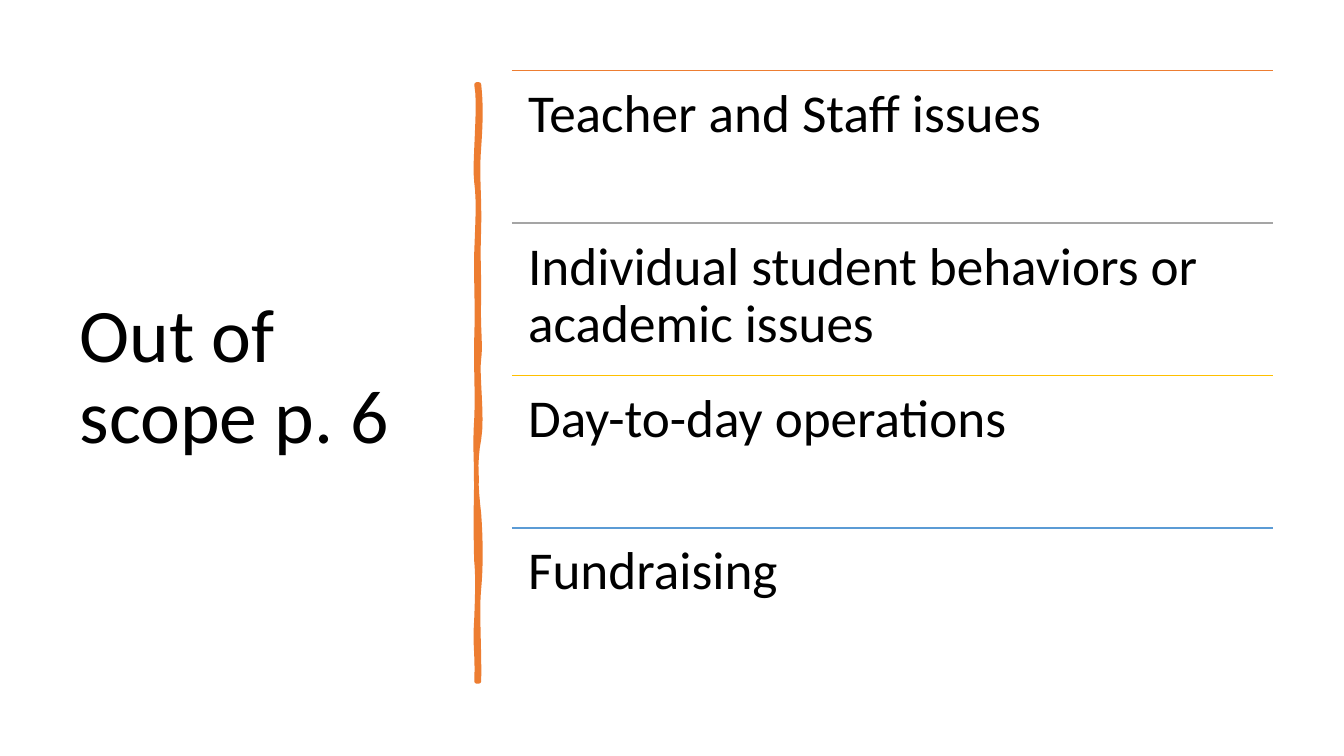
from dataclasses import dataclass

from pptx import Presentation
from pptx.dml.color import RGBColor
from pptx.enum.shapes import MSO_CONNECTOR
from pptx.enum.text import MSO_ANCHOR, MSO_AUTO_SIZE, PP_ALIGN
from pptx.oxml.ns import qn
from pptx.util import Cm, Pt
from lxml.etree import SubElement


@dataclass(frozen=True)
class Theme:
    font: str = "Calibri"
    ink: str = "000000"
    accent: str = "ED7D31"
    rules: tuple = ("ED7D31", "A5A5A5", "FFC000", "5B9BD5")
    title_size: int = 54
    topic_size: int = 38
    rule_width: float = 1
    stroke_width: float = 3.25


THEME = Theme()
TITLE = "Out of scope p. 6"
TOPICS = (
    "Teacher and Staff issues",
    "Individual student behaviors or academic issues",
    "Day-to-day operations",
    "Fundraising",
)

# Topic rows, in cm
ROW_LEFT, ROW_TOP, ROW_WIDTH, ROW_PITCH, ROW_INSET = 12.9, 1.78, 19.18, 3.84, 0.41

# Hand-drawn divider, in cm: each curve is (control x, y, control x, y, end y)
DIVIDER_TOP, RIGHT_X, LEFT_X = 2.13, 12.07, 12.01
RIGHT_EDGE = (
    (12.12, 2.59, 12.12, 3.02, 3.71),
    (12.01, 4.39, 12.09, 4.95, 5.74),
    (12.04, 6.53, 12.07, 6.65, 7.47),
    (12.04, 8.26, 12.12, 8.69, 9.04),
    (12.01, 9.40, 12.17, 10.52, 11.07),
    (11.96, 11.61, 11.99, 12.29, 12.95),
    (12.12, 13.61, 12.12, 14.33, 14.83),
    (12.01, 15.32, 12.09, 16.51, 17.17),
)
LEFT_EDGE = (
    (12.04, 16.41, 11.96, 16.36, 15.57),
    (12.04, 14.81, 12.04, 14.48, 14.15),
    (11.99, 13.82, 11.99, 12.57, 12.12),
    (12.01, 11.66, 11.96, 11.30, 10.54),
    (12.04, 9.80, 11.99, 9.47, 8.51),
    (12.04, 7.57, 11.99, 7.14, 6.35),
    (12.04, 5.54, 12.07, 5.08, 4.60),
    (11.94, 4.14, 12.12, 2.64, 2.13),
)


def apply(target, values):
    for attribute, value in values.items():
        setattr(target, attribute, value)


def write(frame, text, size, frame_format):
    apply(frame, {"word_wrap": True, "auto_size": MSO_AUTO_SIZE.NONE, **frame_format})
    paragraph = frame.paragraphs[0]
    apply(paragraph, {"alignment": PP_ALIGN.LEFT, "line_spacing": 0.9,
                      "space_before": Pt(0)})
    run = paragraph.add_run()
    run.text = text
    apply(run.font, {"name": THEME.font, "size": Pt(size)})
    run.font.color.rgb = RGBColor.from_string(THEME.ink)


def paint_line(line, colour, width):
    line.color.rgb = RGBColor.from_string(colour)
    line.width = Pt(width)


def add_title(slide):
    title = slide.shapes.title
    apply(title, {"left": Cm(1.75), "top": Cm(1.78),
                  "width": Cm(9.5), "height": Cm(15.52)})
    write(title.text_frame, TITLE, THEME.title_size,
          {"vertical_anchor": MSO_ANCHOR.MIDDLE})


def edge_points(edge, x, start_y, steps=8):
    """Sample the Bézier curves that run along one edge of the divider."""
    points = []
    for x1, y1, x2, y2, end_y in edge:
        for step in range(1, steps + 1):
            t = step / steps
            weights = ((1 - t) ** 3, 3 * t * (1 - t) ** 2, 3 * t * t * (1 - t), t ** 3)
            points.append(tuple(
                Cm(sum(w * v for w, v in zip(weights, values)))
                for values in ((x, x1, x2, x), (start_y, y1, y2, end_y))))
        start_y = end_y
    return points


def add_divider(slide):
    bottom = RIGHT_EDGE[-1][-1]
    outline = slide.shapes.build_freeform(Cm(RIGHT_X), Cm(DIVIDER_TOP))
    outline.add_line_segments(
        edge_points(RIGHT_EDGE, RIGHT_X, DIVIDER_TOP)
        + [(Cm(LEFT_X), Cm(bottom))]
        + edge_points(LEFT_EDGE, LEFT_X, bottom), close=True)
    divider = outline.convert_to_shape()
    divider.shadow.inherit = False
    divider.fill.solid()
    divider.fill.fore_color.rgb = RGBColor.from_string(THEME.accent)
    paint_line(divider.line, THEME.accent, THEME.stroke_width)


def add_rule(slide, top, colour):
    rule = slide.shapes.add_connector(
        MSO_CONNECTOR.STRAIGHT, Cm(ROW_LEFT), top, Cm(ROW_LEFT + ROW_WIDTH), top)
    paint_line(rule.line, colour, THEME.rule_width)
    SubElement(rule._element.spPr, qn("a:effectLst"))


def add_topic(slide, top, text):
    topic = slide.shapes.add_textbox(Cm(ROW_LEFT), top, Cm(ROW_WIDTH), Cm(ROW_PITCH))
    sides = ("left", "top", "right", "bottom")
    write(topic.text_frame, text, THEME.topic_size,
          {"vertical_anchor": MSO_ANCHOR.TOP,
           **{f"margin_{side}": Cm(ROW_INSET) for side in sides}})


def main():
    deck = Presentation()
    apply(deck, {"slide_width": Cm(33.87), "slide_height": Cm(19.05)})
    slide = deck.slides.add_slide(deck.slide_layouts.get_by_name("Title Only"))

    # Title and divider
    add_title(slide)
    add_divider(slide)

    # Ruled topic rows
    for index, (text, colour) in enumerate(zip(TOPICS, THEME.rules)):
        top = Cm(ROW_TOP + index * ROW_PITCH)
        add_rule(slide, top, colour)
        add_topic(slide, top, text)

    deck.save("out.pptx")


if __name__ == "__main__":
    main()
